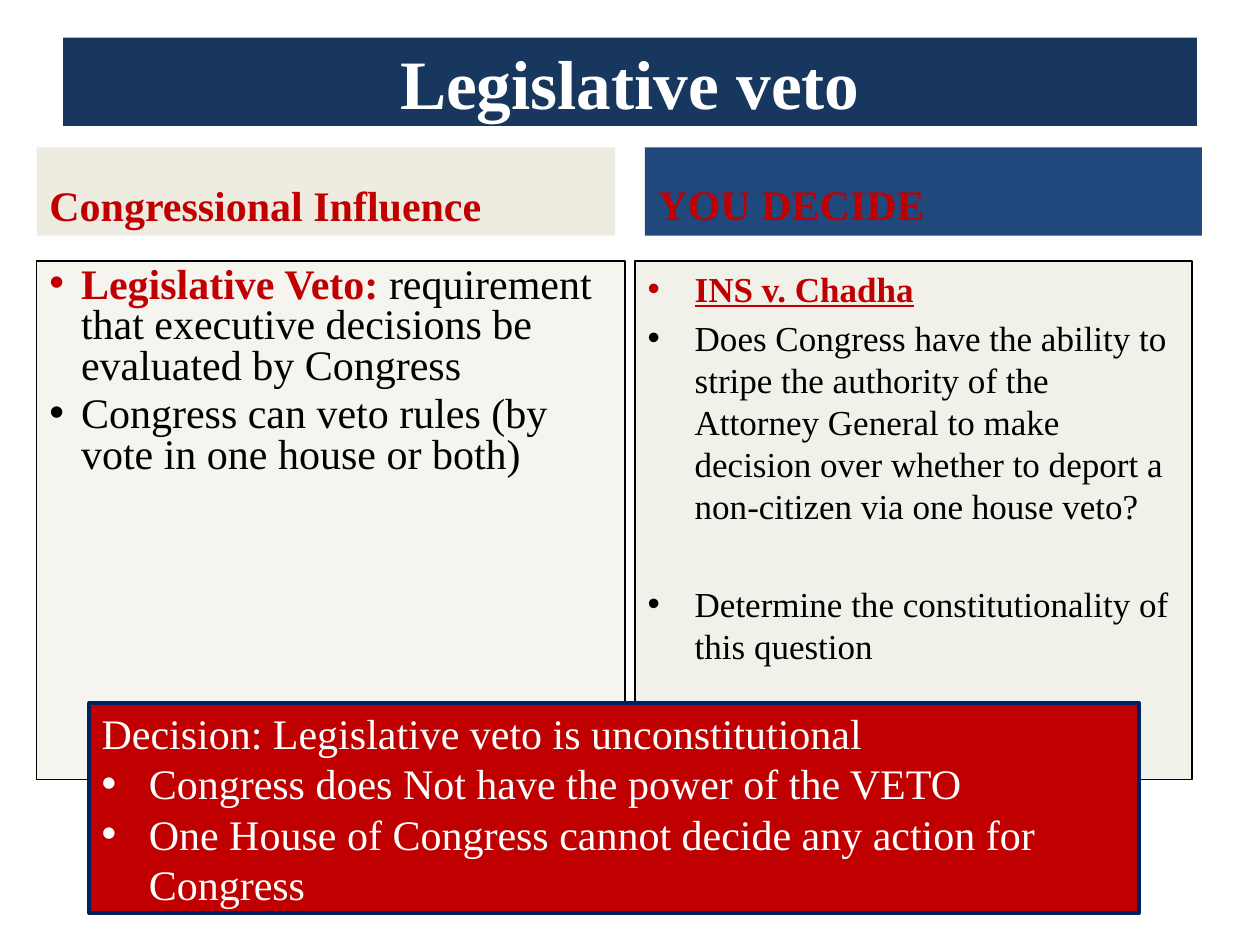
from dataclasses import dataclass

from pptx import Presentation
from pptx.dml.color import RGBColor
from pptx.enum.shapes import MSO_SHAPE
from pptx.enum.text import MSO_ANCHOR as Anchor, MSO_AUTO_SIZE as AutoSize, PP_ALIGN as Align
from pptx.oxml.ns import qn
from pptx.util import Cm, Pt
from lxml.etree import SubElement


@dataclass(frozen=True)
class Theme:
    font: str = "Times New Roman"
    navy: str = "17375E"
    blue: str = "1F497D"
    cream: str = "EEECE1"
    red: str = "C00000"
    black: str = "000000"
    white: str = "FFFFFF"
    border: str = "002060"
    title_size: float = 39.6
    large: int = 24
    small: int = 20


THEME = Theme()
LEFT, HEADING_TOP, HEADING_HEIGHT = 0.74, 2.97, 1.78
BODY_TOP, BODY_HEIGHT, RIGHT_WIDTH = 5.26, 10.46, 11.23


def rgb(color):
    return RGBColor.from_string(color)


def style_panel(panel, fill, line=None, line_width=0.75, opacity=None):
    panel.fill.solid()
    panel.fill.fore_color.rgb = rgb(fill)
    if opacity:
        color = panel.fill._xPr.find(qn("a:solidFill"))[0]
        SubElement(color, qn("a:alpha"), val=str(opacity * 1000))
    if line:
        panel.line.color.rgb = rgb(line)
        panel.line.width = Pt(line_width)


def place(placeholder, left, top, width, height, **style):
    placeholder.left, placeholder.top = Cm(left), Cm(top)
    placeholder.width, placeholder.height = Cm(width), Cm(height)
    style_panel(placeholder, **style)
    return placeholder


def set_bullet(paragraph, indent):
    """Hang the paragraph by indent in cm behind a bullet; no bullet at zero."""
    properties = paragraph._p.get_or_add_pPr()
    properties.set("marL", str(Cm(indent)))
    properties.set("indent", str(-Cm(indent)))
    if indent:
        SubElement(properties, qn("a:buFont"), typeface="Arial")
        SubElement(properties, qn("a:buChar"), char="•")
    else:
        SubElement(properties, qn("a:buNone"))


def write(panel, text, size=THEME.large, color=THEME.black, bold=False, underline=False,
          indent=0, before=0, spacing=1.0, align=Align.LEFT, anchor=None, lead=""):
    """Add a paragraph, with an optional bold red lead before its text."""
    frame = panel.text_frame
    frame.word_wrap = True
    frame.auto_size = AutoSize.NONE
    if anchor is not None:
        frame.vertical_anchor = anchor
    paragraph = frame.add_paragraph() if frame.text else frame.paragraphs[0]
    set_bullet(paragraph, indent)
    paragraph.alignment = align
    paragraph.line_spacing = spacing
    paragraph.space_before = Pt(before)
    for words, shade, heavy in ((lead, THEME.red, True), (text, color, bold)):
        if words:
            run = paragraph.add_run()
            run.text = words
            font = run.font
            font.name, font.size = THEME.font, Pt(size)
            font.bold, font.underline = heavy, underline
            font.color.rgb = rgb(shade)


def add_headings(title, influence, decide):
    place(title, 1.27, 0.76, 22.86, 1.78, fill=THEME.navy)
    write(title, "Legislative veto", size=THEME.title_size, color=THEME.white, bold=True,
          align=Align.CENTER, anchor=Anchor.MIDDLE)
    heading = dict(color=THEME.red, bold=True, anchor=Anchor.BOTTOM)
    place(influence, LEFT, HEADING_TOP, 11.66, HEADING_HEIGHT, fill=THEME.cream)
    write(influence, "Congressional Influence", spacing=0.8, **heading)
    place(decide, 13, HEADING_TOP, RIGHT_WIDTH, HEADING_HEIGHT, fill=THEME.blue)
    write(decide, "YOU DECIDE", **heading)


def add_influence_list(panel):
    place(panel, LEFT, BODY_TOP, 11.86, BODY_HEIGHT,
          fill=THEME.cream, line=THEME.black, opacity=54)
    bullet = dict(indent=0.64, spacing=0.8, anchor=Anchor.TOP)
    write(panel, "requirement that executive decisions be evaluated by Congress",
          lead="Legislative Veto: ", **bullet)
    write(panel, "Congress can veto rules (by vote in one house or both)", before=4.8, **bullet)


def add_case_list(panel):
    place(panel, 12.8, BODY_TOP, RIGHT_WIDTH, BODY_HEIGHT,
          fill=THEME.cream, line=THEME.black, opacity=71)
    bullet = dict(size=THEME.small, indent=0.95, anchor=Anchor.TOP)
    write(panel, "INS v. Chadha", color=THEME.red, bold=True, underline=True, **bullet)
    write(panel, "Does Congress have the ability to stripe the authority of the Attorney General "
          "to make decision over whether to deport a non-citizen via one house veto?",
          before=4, **bullet)
    write(panel, "Determine the constitutionality of this question", before=32, **bullet)


def add_decision(slide):
    decision = slide.shapes.add_shape(MSO_SHAPE.RECTANGLE, Cm(1.8), Cm(14.17), Cm(21.16), Cm(4.24))
    decision.shadow.inherit = False
    style_panel(decision, THEME.red, THEME.border, line_width=2)
    write(decision, "Decision: Legislative veto is unconstitutional",
          color=THEME.white, anchor=Anchor.MIDDLE)
    for ruling in ("Congress does Not have the power of the VETO",
                   "One House of Congress cannot decide any action for Congress"):
        write(decision, ruling, color=THEME.white, indent=0.95)


def main():
    deck = Presentation()
    deck.slide_width, deck.slide_height = Cm(25.4), Cm(19.05)
    slide = deck.slides.add_slide(deck.slide_layouts.get_by_name("Comparison"))
    title, influence, influence_list, decide, case_list = slide.placeholders
    add_headings(title, influence, decide)
    add_influence_list(influence_list)
    add_case_list(case_list)
    add_decision(slide)
    deck.save("out.pptx")


if __name__ == "__main__":
    main()
